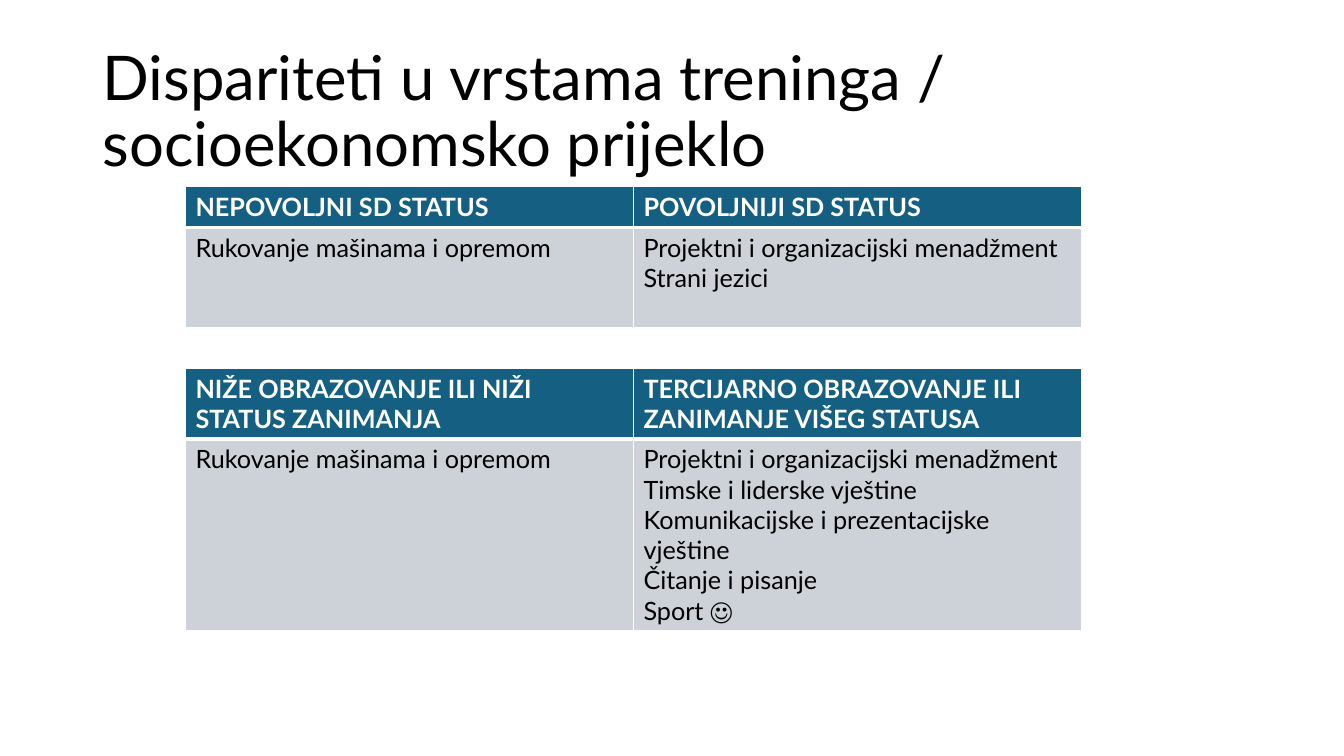
from dataclasses import dataclass

from lxml.etree import SubElement
from pptx import Presentation
from pptx.dml.color import RGBColor
from pptx.enum.text import MSO_ANCHOR, MSO_AUTO_SIZE, PP_ALIGN
from pptx.oxml.ns import qn
from pptx.util import Pt


@dataclass(frozen=True)
class Theme:
    font: str = "Lato"
    title_size: int = 44
    table_size: int = 18
    ink: str = "000000"
    white: str = "FFFFFF"
    header: str = "156082"
    body: str = "CCD2D8"
    thin: int = 1
    thick: int = 3


THEME = Theme()

STATUS_ROWS = [
    (["NEPOVOLJNI SD STATUS"], ["POVOLJNIJI SD STATUS"]),
    (["Rukovanje mašinama i opremom"],
     ["Projektni i organizacijski menadžment", "Strani jezici"]),
]
EDUCATION_ROWS = [
    (["NIŽE OBRAZOVANJE ILI NIŽI STATUS ZANIMANJA"],
     ["TERCIJARNO OBRAZOVANJE ILI ZANIMANJE VIŠEG STATUSA"]),
    (["Rukovanje mašinama i opremom"],
     ["Projektni i organizacijski menadžment",
      "Timske i liderske vještine",
      "Komunikacijske i prezentacijske vještine",
      "Čitanje i pisanje",
      "Sport ☺"]),
]


def add_run(p, text, size, color, bold=False):
    r = p.add_run()
    r.text = text
    r.font.name = THEME.font
    r.font.size = Pt(size)
    r.font.bold = bold
    r.font.color.rgb = RGBColor.from_string(color)


def set_borders(cell, widths):
    tc_pr = cell._tc.get_or_add_tcPr()
    for side, width in zip("LRTB", widths):
        line = SubElement(tc_pr, qn(f"a:ln{side}"), w=str(Pt(width)))
        fill = SubElement(line, qn("a:solidFill"))
        SubElement(fill, qn("a:srgbClr"), val=THEME.white)


def fill_cell(cell, lines, is_header):
    thin, thick = THEME.thin, THEME.thick
    set_borders(cell, (thin, thin, thin, thick) if is_header else (thin, thin, thick, thin))
    cell.fill.solid()
    cell.fill.fore_color.rgb = RGBColor.from_string(THEME.header if is_header else THEME.body)
    tf = cell.text_frame
    for i, line in enumerate(lines):
        p = tf.add_paragraph() if i else tf.paragraphs[0]
        add_run(p, line, THEME.table_size, THEME.white if is_header else THEME.ink, is_header)


def add_comparison(s, box, rows, header_height):
    left, top, width, height = box
    table = s.shapes.add_table(len(rows), 2, Pt(left), Pt(top), Pt(width), Pt(height)).table
    for column in table.columns:
        column.width = Pt(width / 2)
    table.rows[0].height = Pt(header_height)
    table.rows[1].height = Pt(height - header_height)
    for i, row in enumerate(rows):
        for j, lines in enumerate(row):
            fill_cell(table.cell(i, j), lines, i == 0)


def add_title(s, box, text):
    sp = s.shapes.title
    sp.left, sp.top, sp.width, sp.height = map(Pt, box)
    tf = sp.text_frame
    tf.word_wrap = True
    tf.auto_size = MSO_AUTO_SIZE.NONE
    tf.vertical_anchor = MSO_ANCHOR.MIDDLE
    p = tf.paragraphs[0]
    p.alignment = PP_ALIGN.LEFT
    p.line_spacing = 0.9
    add_run(p, text, THEME.title_size, THEME.ink)


def main():
    prs = Presentation()
    prs.slide_width, prs.slide_height = Pt(960), Pt(540)
    s = prs.slides.add_slide(prs.slide_layouts[5])
    add_title(s, (66, 28.75, 828, 104.4),
              "Dispariteti u vrstama treninga / socioekonomsko prijeklo")
    add_comparison(s, (132.5, 133.2, 640, 101), STATUS_ROWS, 29.2)
    add_comparison(s, (132.5, 263.2, 640, 187.2), EDUCATION_ROWS, 50.4)
    prs.save("out.pptx")


if __name__ == "__main__":
    main()
